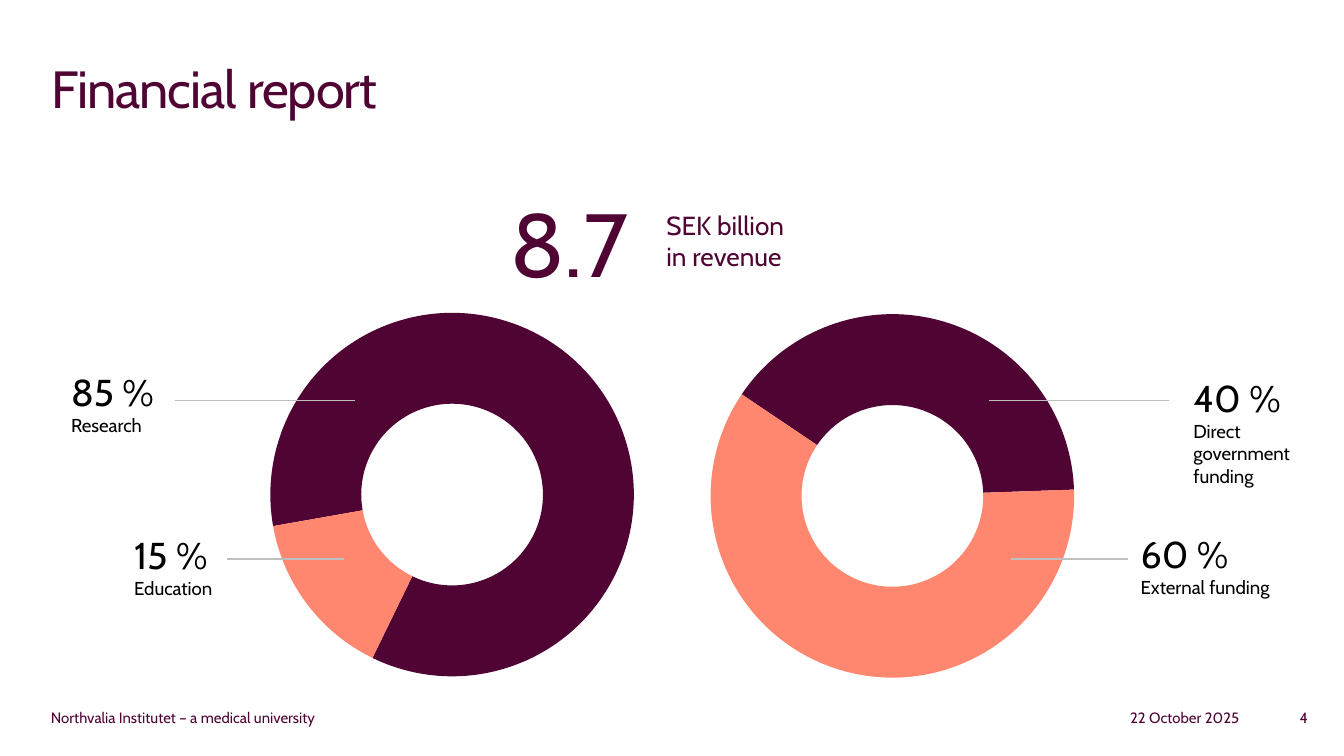
from lxml.etree import SubElement
from pptx import Presentation
from pptx.chart.data import CategoryChartData as ChartData
from pptx.dml.color import RGBColor
from pptx.enum.chart import XL_CHART_TYPE as Kind
from pptx.enum.shapes import MSO_CONNECTOR as Conn
from pptx.enum.text import MSO_ANCHOR as Anchor, PP_ALIGN as Align
from pptx.oxml.ns import qn
from pptx.util import Pt

FONT = "Cabin"
PLUM = RGBColor(0x4F, 0x04, 0x33)
CORAL = RGBColor(0xFF, 0x87, 0x6F)
BLACK = RGBColor(0, 0, 0)
GREY = RGBColor(0xBF, 0xBF, 0xBF)

TITLE = "Financial report"
# values, first angle, left, top, width
RINGS = [
    ((40, 60), 304, 337.7, 158.4, 280.8),
    ((85, 15), 260, 87.8, 157.7, 308.9),
]
RING_H = 214.6
# share, label, left, top, width, height
SHARES = [
    ("85 %", "Research", 31, 194.4, 62.6, 55.4),
    ("15 %", "Education", 64.8, 281.5, 71.3, 55.4),
    ("40 %", "Direct government funding", 632.2, 197.3, 79.9, 79.9),
    ("60 %", "External funding", 604, 280.8, 95.8, 55.4),
]
# start, end, height on the slide
LEADERS = [
    (93.6, 190.1, 214.6),
    (121.7, 184.3, 299.5),
    (529.9, 626.4, 214.6),
    (541.4, 604.1, 299.5),
]
# text, left, width, alignment
FOOTER = [
    ("Northvalia Institutet – a medical university", 20.2, 203.8, Align.LEFT),
    ("22 October 2025", 521.3, 149.8, Align.RIGHT),
    ("4", 653.8, 54, Align.RIGHT),
]


def style(par, size, color, align=Align.LEFT):
    par.alignment = align
    for run in par.runs:
        run.font.name = FONT
        run.font.size = Pt(size)
        run.font.color.rgb = color


def add_text(slide, box, lines, color=PLUM, align=Align.LEFT):
    """Add a text box; lines holds one (text, size) pair a paragraph."""
    frame = slide.shapes.add_textbox(*map(Pt, box)).text_frame
    frame.word_wrap = True
    frame.text = "\n".join(text for text, _ in lines)
    for par, (_, size) in zip(frame.paragraphs, lines):
        style(par, size, color, align)
    return frame


def add_title(slide):
    title = slide.shapes.title
    title.left, title.top = Pt(20.2), Pt(26.6)
    title.width, title.height = Pt(679.7), Pt(67.7)
    frame = title.text_frame
    frame.text = TITLE
    frame.vertical_anchor = Anchor.TOP
    par = frame.paragraphs[0]
    style(par, 28, PLUM)
    par.runs[0].font._element.set("spc", "-50")


def add_ring(slide, values, angle, left, top, width):
    data = ChartData()
    data.categories = ["1", "2"]
    data.add_series("Series 1", values)
    box = map(Pt, (left, top, width, RING_H))
    chart = slide.shapes.add_chart(Kind.DOUGHNUT, *box, data).chart
    chart.has_legend = chart.has_title = False
    chart.font.name, chart.font.size = FONT, Pt(10)
    chart.font.color.rgb = BLACK
    plot = chart.plots[0]
    plot.vary_by_categories = True
    plot._element.find(qn("c:firstSliceAng")).set("val", str(angle))
    plot._element.find(qn("c:holeSize")).set("val", "50")
    for i, color in enumerate((PLUM, CORAL)):
        form = plot.series[0].points[i].format
        form.fill.solid()
        form.fill.fore_color.rgb = color
        form.line.fill.background()


def add_leader(slide, start, end, y):
    line = slide.shapes.add_connector(
        Conn.STRAIGHT, Pt(start), Pt(y), Pt(end), Pt(y))
    line.line.color.rgb = GREY
    line.line.width = Pt(0.75)
    SubElement(line._element.spPr, qn("a:effectLst"))


def main():
    deck = Presentation()
    deck.slide_width, deck.slide_height = Pt(720), Pt(405)
    slide = deck.slides.add_slide(deck.slide_layouts[5])
    for ring in RINGS:
        add_ring(slide, *ring)
    add_title(slide)
    add_text(slide, (240, 97, 130, 66), [("8.7", 48)], align=Align.CENTER)
    add_text(slide, (349.9, 108.7, 360, 41),
             [("SEK billion", 14), ("in revenue", 14)])
    for share, label, *box in SHARES:
        add_text(slide, box, [(share, 20), (label, 10)], BLACK)
    for leader in LEADERS:
        add_leader(slide, *leader)
    for text, left, width, align in FOOTER:
        frame = add_text(slide, (left, 377.3, width, 13.7), [(text, 8)],
                         align=align)
        frame.margin_top = frame.margin_bottom = 0
        frame.vertical_anchor = Anchor.MIDDLE
    deck.save("out.pptx")


if __name__ == "__main__":
    main()
